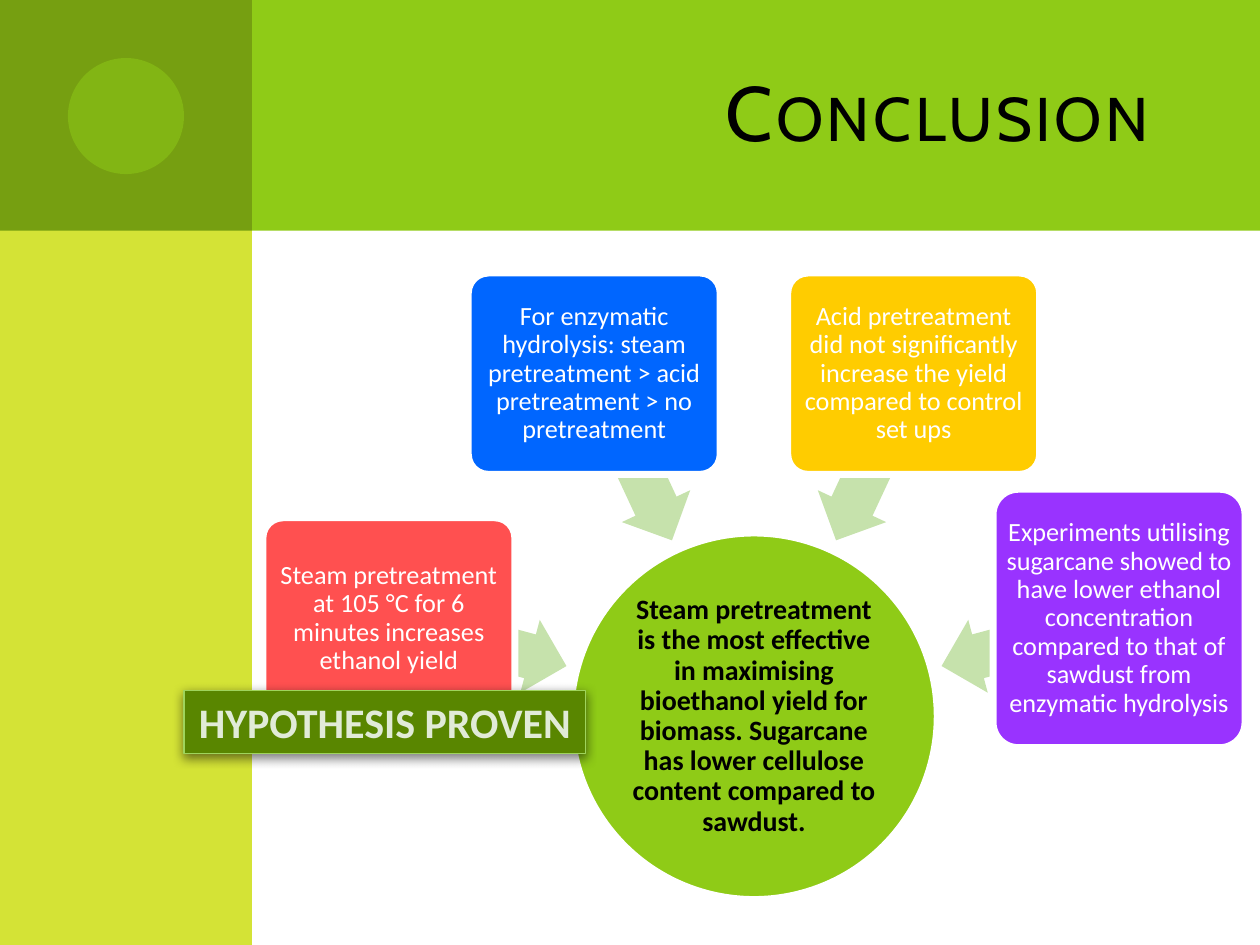
from math import cos, radians, sin

from lxml import etree
from pptx import Presentation
from pptx.dml.color import RGBColor
from pptx.enum import shapes, text
from pptx.oxml.ns import qn
from pptx.util import Cm, Pt

COLOURS = {
    "white": "FFFFFF", "black": "000000", "lime": "8FCB17", "yellow": "D4E336",
    "olive": "769F11", "arrow": "C6E2AC", "red": "FF5050", "blue": "0066FF",
    "amber": "FFCC00", "violet": "9933FF", "banner": "598600",
    "banner edge": "9FD45C", "banner text": "E1EBD7",
}
TITLE = "Conclusion"
VERDICT = "HYPOTHESIS PROVEN"
SUMMARY = ("Steam pretreatment is the most effective in maximising bioethanol yield for "
           "biomass. Sugarcane has lower cellulose content compared to sawdust.")
FINDINGS = [
    (195, "red", 4.06, "Steam pretreatment at 105 °C for 6 minutes increases ethanol yield"),
    (245, "blue", 4.06, "For enzymatic hydrolysis: steam pretreatment > acid pretreatment "
                        "> no pretreatment"),
    (295, "amber", 4.06, "Acid pretreatment did not significantly increase the yield "
                         "compared to control set ups"),
    (345, "violet", 5.21, "Experiments utilising sugarcane showed to have lower ethanol "
                          "concentration compared to that of sawdust from enzymatic hydrolysis"),
]
BANDS = [
    ("RECTANGLE", "lime", (1.27, 0, 24.13, 4.65)),
    ("RECTANGLE", "yellow", (0, 0, 5.08, 19.05)),
    ("RECTANGLE", "olive", (0, 0, 5.08, 4.65)),
]
HUB_X, HUB_Y, HUB_SIZE = 15.2, 14.44, 7.39
ARROW_RADIUS, CARD_RADIUS = 5.77, 7.62
ARROW_WIDTH, ARROW_HEIGHT, CARD_WIDTH = 3.71, 1.52, 5.08

deck = Presentation()
deck.slide_width, deck.slide_height = Cm(25.4), Cm(19.05)
slide = deck.slides.add_slide(deck.slide_layouts[6])


def rgb(name):
    return RGBColor.from_string(COLOURS[name])


def add_part(kind, fill, box, edge=None, edge_width=4):
    part = slide.shapes.add_shape(getattr(shapes.MSO_SHAPE, kind), *map(Cm, box))
    part.shadow.inherit = False
    part.fill.solid()
    part.fill.fore_color.rgb = rgb(fill)
    if edge:
        part.line.color.rgb = rgb(edge)
        part.line.width = Pt(edge_width)
    else:
        part.line.fill.background()
    return part


def around_hub(radius, angle, width, height):
    x = HUB_X + radius * cos(radians(angle))
    y = HUB_Y + radius * sin(radians(angle))
    return x - width / 2, y - height / 2, width, height


def write(part, wording, size, colour, bold=False, inset=None, font="Calibri",
          align=text.PP_ALIGN.CENTER, spacing=None):
    frame = part.text_frame
    frame.word_wrap = True
    frame.vertical_anchor = text.MSO_ANCHOR.MIDDLE
    if inset is not None:
        frame.margin_left = frame.margin_right = Cm(inset)
        frame.margin_top = frame.margin_bottom = Cm(inset)
    paragraph = frame.paragraphs[0]
    paragraph.text = wording
    paragraph.alignment = align
    paragraph.line_spacing = spacing
    paragraph.font.name = font
    paragraph.font.size = Pt(size)
    paragraph.font.bold = bold
    paragraph.font.color.rgb = rgb(colour)
    return frame


def add_alpha(colour_element, percent):
    etree.SubElement(colour_element, qn("a:alpha"), val=str(percent * 1000))


for band in BANDS:
    add_part(*band)
dot = add_part("OVAL", "lime", (1.37, 1.17, 2.34, 2.34))
add_alpha(dot.fill._xPr.find(".//" + qn("a:srgbClr")), 50)

heading = slide.shapes.add_textbox(*map(Cm, (6.78, 0.64, 17.35, 3.18)))
heading_frame = write(heading, TITLE, 44, "black", font="Cabin", align=text.PP_ALIGN.RIGHT)
heading_style = heading_frame.paragraphs[0].runs[0].font._element
heading_style.set("cap", "small")
heading_style.set("spc", "200")

hub = add_part("OVAL", "lime", around_hub(0, 0, HUB_SIZE, HUB_SIZE), "white")
write(hub, SUMMARY, 16, "black", bold=True, inset=0.03, spacing=0.9)

for angle, colour, height, finding in FINDINGS:
    arrow = add_part("LEFT_ARROW", "arrow",
                     around_hub(ARROW_RADIUS, angle, ARROW_WIDTH, ARROW_HEIGHT))
    arrow.adjustments[0], arrow.adjustments[1] = 0.6, 0.5
    arrow.rotation = angle
    card = add_part("ROUNDED_RECTANGLE", colour,
                    around_hub(CARD_RADIUS, angle, CARD_WIDTH, height), "white")
    card.adjustments[0] = 0.1
    write(card, finding, 15, "white", inset=0.08, spacing=0.9)

banner = add_part("RECTANGLE", "banner", (3.71, 13.92, 8.1, 1.27), "banner edge", 0.75)
banner_frame = write(banner, VERDICT, 24, "banner text", bold=True)
banner_frame.word_wrap = False
banner_frame.auto_size = text.MSO_AUTO_SIZE.SHAPE_TO_FIT_TEXT
effects = banner._element.spPr.find(qn("a:effectLst"))
shadow = etree.SubElement(effects, qn("a:outerShdw"), blurRad=str(Pt(6)), dist=str(Pt(2)),
                          dir="5400000", rotWithShape="0")
add_alpha(etree.SubElement(shadow, qn("a:srgbClr"), val=COLOURS["black"]), 50)

deck.save("out.pptx")
